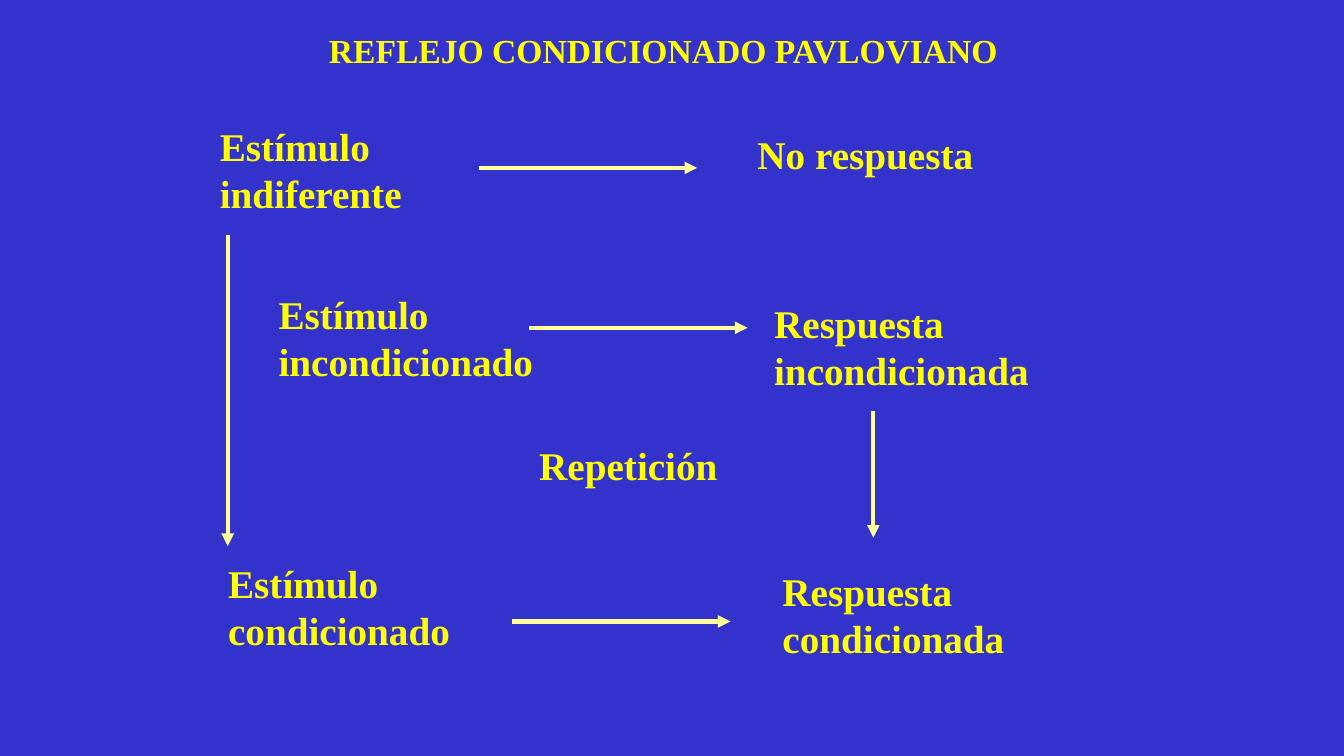
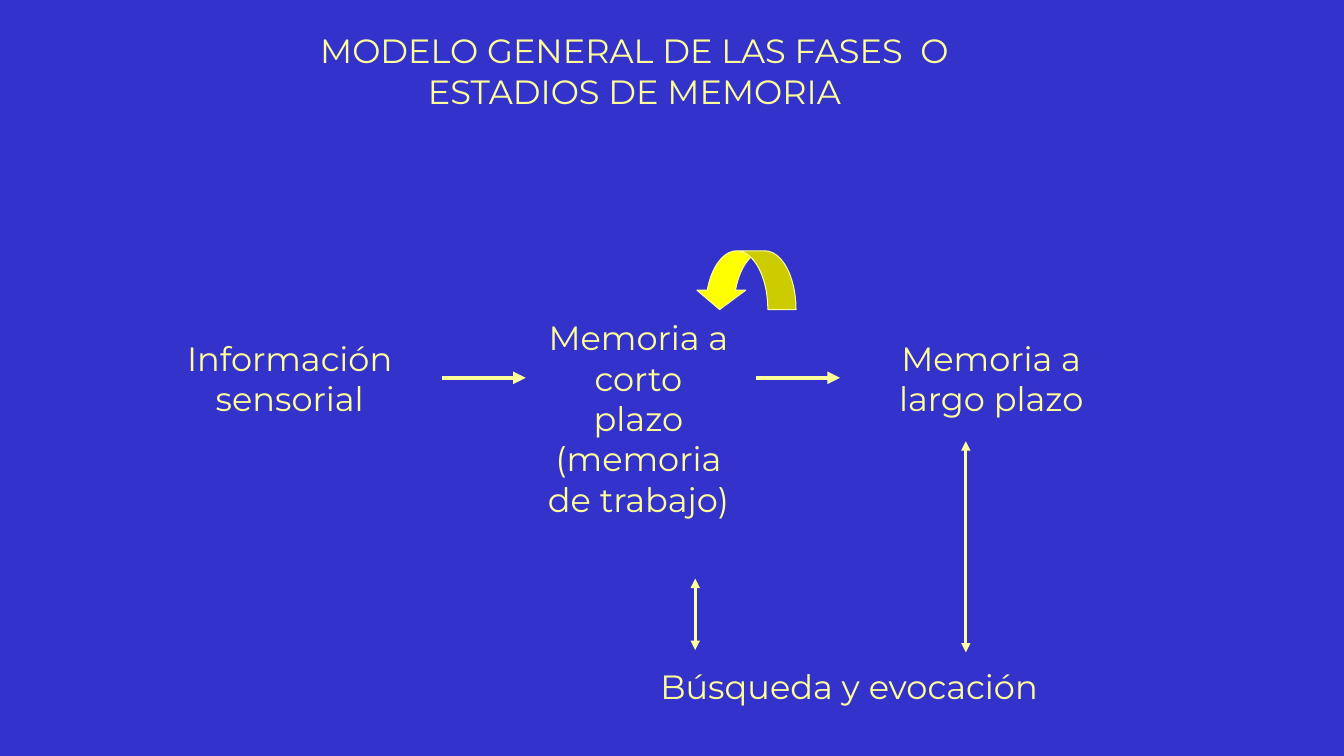
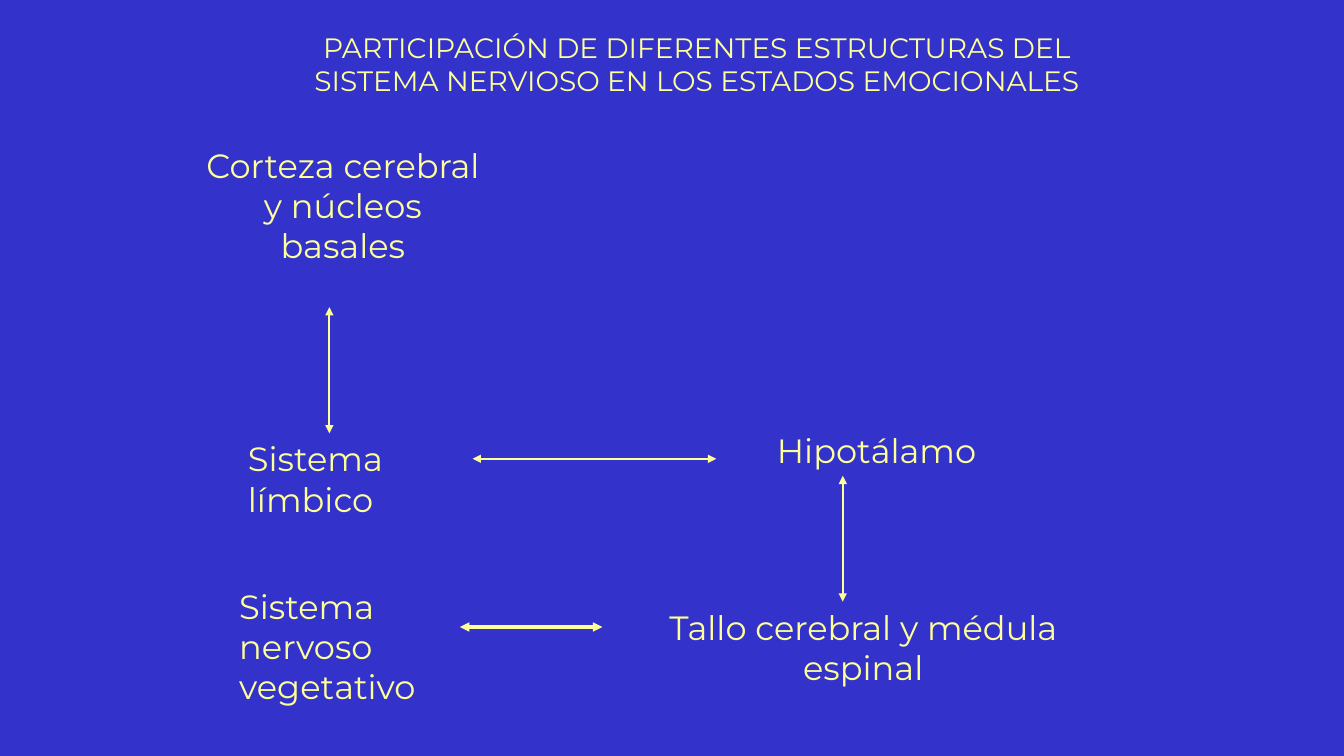
from pptx import Presentation
from pptx.dml.color import RGBColor
from pptx.enum.shapes import MSO_CONNECTOR, MSO_SHAPE
from pptx.enum.text import MSO_AUTO_SIZE, PP_ALIGN
from pptx.oxml.ns import qn
from pptx.util import Cm, Pt
from lxml import etree

LEFT, CENTER = PP_ALIGN.LEFT, PP_ALIGN.CENTER
GROW = MSO_AUTO_SIZE.SHAPE_TO_FIT_TEXT
STRAIGHT = MSO_CONNECTOR.STRAIGHT
CURVED_ARROW = MSO_SHAPE.CURVED_UP_ARROW

BLUE, YELLOW, CREAM = "3333CC", "FFFF00", "FFFF99"
SERIF = {"name": "Times New Roman", "size": 28, "bold": True, "color": YELLOW}
SANS = {"name": "Montserrat", "size": 24, "bold": False, "color": CREAM}
TITLE_TOP = 0.64


def rgb(value):
    return RGBColor.from_string(value)


class Deck:
    """Shared style plus the slide being filled; lengths are in cm."""

    def __init__(self):
        self.prs = Presentation()
        self.prs.slide_width, self.prs.slide_height = Cm(33.87), Cm(19.05)
        fill = self.prs.slide_master.background.fill
        fill.solid()
        fill.fore_color.rgb = rgb(BLUE)

    def new_slide(self, style):
        self.s = self.prs.slides.add_slide(self.prs.slide_layouts[6])
        self.style = style

    def text(self, text, x, y, w, lines=1, align=LEFT, size=None):
        fmt = dict(self.style)
        fmt["size"] = Pt(size or fmt["size"])
        color = fmt.pop("color")
        height = Cm(0.25) + int(lines * fmt["size"] * 1.2)
        tf = self.s.shapes.add_textbox(Cm(x), Cm(y), Cm(w), height).text_frame
        tf.word_wrap, tf.auto_size = True, GROW
        p = tf.paragraphs[0]
        p.alignment = align
        r = p.add_run()
        r.text = text
        for name, value in fmt.items():
            setattr(r.font, name, value)
        r.font.color.rgb = rgb(color)

    def title(self, text, x, w, lines=2, align=CENTER, size=24):
        self.text(text, x, TITLE_TOP, w, lines, align, size)

    def arrow(self, x1, y1, x2, y2, width=3, both=False):
        line = self.s.shapes.add_connector(STRAIGHT, Cm(x1), Cm(y1), Cm(x2), Cm(y2))
        line.line.color.rgb = rgb(CREAM)
        line.line.width = Pt(width)
        ln = line.line._get_or_add_ln()
        for end in ("a:headEnd", "a:tailEnd") if both else ("a:tailEnd",):
            etree.SubElement(ln, qn(end), type="triangle")
        etree.SubElement(line._element.spPr, qn("a:effectLst"))

    def loop_arrow(self, x, y, w, h):
        sp = self.s.shapes.add_shape(CURVED_ARROW, Cm(x), Cm(y), Cm(w), Cm(h))
        sp.shadow.inherit = False
        sp.rotation = 180
        for i, value in enumerate((0.48, 0.83, 0.33)):
            sp.adjustments[i] = value
        sp.fill.solid()
        sp.fill.fore_color.rgb = rgb(YELLOW)
        sp.line.color.rgb = rgb(CREAM)
        sp.line.width = Pt(0.75)


def conditioned_reflex(deck):
    deck.new_slide(SERIF)
    deck.title("REFLEJO CONDICIONADO PAVLOVIANO", 8.04, 19.26, 1, LEFT)

    # Stimuli and responses
    for text, x, y, w, lines in (
        ("Estímulo indiferente", 5.29, 2.96, 5.93, 2),
        ("No respuesta", 18.84, 3.17, 7.62, 1),
        ("Estímulo incondicionado", 6.77, 7.2, 7.62, 2),
        ("Respuesta incondicionada", 19.26, 7.41, 7.2, 2),
        ("Repetición", 13.34, 11, 5.93, 1),
        ("Estímulo condicionado", 5.5, 13.97, 7.2, 2),
        ("Respuesta condicionada", 19.47, 14.18, 8.04, 2),
    ):
        deck.text(text, x, y, w, lines)

    # Stimulus to response, then the two downward steps
    for x, y in ((12.07, 4.23), (13.34, 8.26), (12.91, 15.66)):
        deck.arrow(x, y, x + 5.5, y)
    for x, top, bottom in ((5.74, 5.93, 13.76), (22.01, 10.37, 13.55)):
        deck.arrow(x, top, x, bottom)


def memory_stages(deck):
    deck.new_slide(SANS)
    deck.title("MODELO GENERAL DE LAS FASES  O ESTADIOS DE MEMORIA", 5.93, 20.11)

    # Stages
    for text, x, y, w, lines, align in (
        ("Información sensorial", 4.23, 8.39, 6.14, 2, CENTER),
        ("Memoria a corto plazo (memoria de trabajo)", 13.55, 7.87, 5.08, 6, CENTER),
        ("Memoria a largo plazo", 21.38, 8.39, 7.2, 2, CENTER),
        ("Búsqueda y evocación", 16.39, 16.66, 12.2, 1, LEFT),
    ):
        deck.text(text, x, y, w, lines, align)

    # Flow, rehearsal loop and retrieval
    for x in (11.13, 19.05):
        deck.arrow(x, 9.52, x + 2.12, 9.52)
    deck.loop_arrow(17.52, 6.32, 2.54, 1.48)
    for x, top, bottom in ((17.52, 14.58, 16.38), (24.34, 11.12, 16.44)):
        deck.arrow(x, top, x, bottom, 2.25, both=True)


def emotional_states(deck):
    deck.new_slide(SANS)
    deck.title("PARTICIPACIÓN DE DIFERENTES ESTRUCTURAS DEL SISTEMA NERVIOSO "
               "EN LOS ESTADOS EMOCIONALES", 6.56, 22.01, size=20)

    # Structures
    for text, x, y, w, lines, align in (
        ("Corteza cerebral y núcleos basales", 4.94, 3.52, 7.4, 4, CENTER),
        ("Sistema límbico", 6, 10.92, 5.71, 2, LEFT),
        ("Hipotálamo", 19.33, 10.72, 6.35, 1, LEFT),
        ("Tallo cerebral y médula espinal", 15.72, 15.16, 12.07, 2, CENTER),
        ("Sistema nervoso vegetativo", 5.78, 14.63, 5.69, 3, LEFT),
    ):
        deck.text(text, x, y, w, lines, align)

    # Two-way links
    for x1, y1, x2, y2, width in (
        (8.3, 7.74, 8.3, 10.92, 1.5),
        (11.91, 11.56, 18.05, 11.56, 1.5),
        (21.24, 11.99, 21.24, 15.16, 1.5),
        (11.59, 15.8, 15.18, 15.8, 2.25),
    ):
        deck.arrow(x1, y1, x2, y2, width, both=True)


def main():
    deck = Deck()
    conditioned_reflex(deck)
    memory_stages(deck)
    emotional_states(deck)
    deck.prs.save("out.pptx")


if __name__ == "__main__":
    main()
